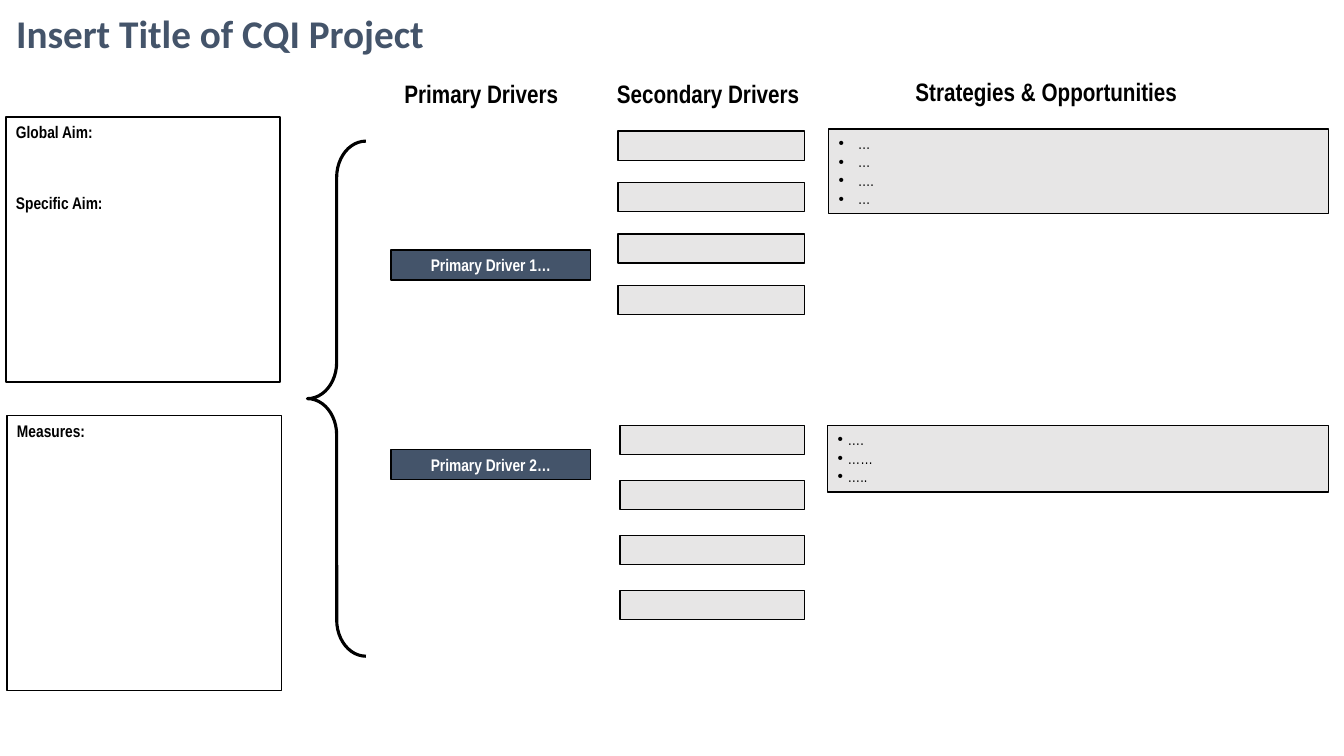
from dataclasses import dataclass

from pptx import Presentation
from pptx.dml.color import RGBColor
from pptx.enum.shapes import MSO_SHAPE as Preset
from pptx.enum.text import MSO_ANCHOR as Anchor, MSO_AUTO_SIZE as AutoSize, PP_ALIGN as Align
from pptx.oxml.xmlchemy import OxmlElement
from pptx.util import Inches, Pt

CELL = Inches(0.1)  # side of one square of the layout grid
COLUMNS, ROWS = 133.33, 75
INK, WHITE, NAVY, GREY = "000000", "FFFFFF", "44546A", "E7E6E6"
BODY_FONT, TITLE_FONT = "Arial Narrow", "Calibri"


@dataclass(frozen=True)
class Area:
    """A place on the grid, in columns and rows."""
    column: float
    row: float
    columns: float
    rows: float

    def emu(self) -> tuple[int, ...]:
        return tuple(round(n * CELL) for n in (self.column, self.row, self.columns, self.rows))


@dataclass(frozen=True)
class Panel:
    area: Area
    headings: list[str]


@dataclass(frozen=True)
class Driver:
    label: str
    row: float
    secondary: Area  # first of its secondary drivers
    secondary_step: float
    strategies: Area
    strategy_items: list[str]
    indent: float


TITLE_AREA = Area(0.6, 0.4, 89.1, 5.7)
BRACE_AREA = Area(30.5, 14, 5.8, 51.1)
SECONDARY_COUNT = 4
COLUMN_HEADINGS = {
    "Primary Drivers": Area(38.8, 7.3, 17.9, 4),
    "Secondary Drivers": Area(59.8, 7.3, 20.9, 4),
    "Strategies & Opportunities": Area(83.2, 7.1, 41.2, 4),
}
PANELS = [
    Panel(Area(0.6, 11.6, 27.2, 26.3), ["Global Aim:", "Specific Aim:"]),
    Panel(Area(0.7, 41.2, 27.2, 27.3), ["Measures:"]),
]
DRIVERS = [
    Driver("Primary Driver 1…", 24.8, Area(61.3, 13, 18.5, 2.9), 5.1,
           Area(82.2, 12.8, 49.6, 8.4), ["…", "…", "….", "…"], 0.19),
    Driver("Primary Driver 2…", 44.6, Area(61.5, 42.2, 18.3, 2.9), 5.45,
           Area(82.1, 42.2, 49.7, 6.6), ["….", "……", "….."], 0.1),
]


def rgb(hex_code: str) -> RGBColor:
    return RGBColor.from_string(hex_code)


def write(shape, lines: list[str], *, size: float, font: str = BODY_FONT, color: str = INK,
          bold: bool = True, align=Align.LEFT, anchor=Anchor.TOP, gap: float = 0,
          bullet_indent: float = 0) -> None:
    """Fill a shape with one paragraph per line; gap is the points between them."""
    frame = shape.text_frame
    frame.text = "\n".join(lines)
    frame.word_wrap = True
    frame.auto_size = AutoSize.NONE
    frame.vertical_anchor = anchor
    for number, paragraph in enumerate(frame.paragraphs):
        paragraph.alignment = align
        paragraph.space_before = Pt(gap if number else 0)
        style = paragraph.runs[0].font
        style.name, style.size, style.bold = font, Pt(size), bold
        style.color.rgb = rgb(color)
        if bullet_indent:
            add_bullet(paragraph, bullet_indent)


def add_bullet(paragraph, indent: float) -> None:
    properties = paragraph._p.get_or_add_pPr()
    properties.set("marL", str(Inches(indent)))
    properties.set("indent", str(-Inches(indent)))
    typeface = OxmlElement("a:buFont")
    typeface.set("typeface", "Arial")
    mark = OxmlElement("a:buChar")
    mark.set("char", "•")
    properties.extend([typeface, mark])


def place(shape, area: Area) -> None:
    shape.left, shape.top, shape.width, shape.height = area.emu()


def paint(shape, fill: str) -> None:
    shape.fill.solid()
    shape.fill.fore_color.rgb = rgb(fill)
    shape.line.color.rgb = rgb(INK)
    shape.line.width = Pt(1)


def add_box(slide, area: Area, fill: str):
    box = slide.shapes.add_shape(Preset.RECTANGLE, *area.emu())
    box.shadow.inherit = False
    paint(box, fill)
    return box


def add_brace(slide) -> None:
    brace = slide.shapes.add_shape(Preset.LEFT_BRACE, *BRACE_AREA.emu())
    brace.shadow.inherit = False
    brace.adjustments[0], brace.adjustments[1] = 0.62, 0.5
    brace.fill.background()
    brace.line.color.rgb = rgb(INK)
    brace.line.width = Pt(2.25)


def add_driver(slide, driver: Driver, strategies) -> None:
    primary = add_box(slide, Area(38.8, driver.row, 19.8, 3), NAVY)
    write(primary, [driver.label], size=12, color=WHITE, align=Align.CENTER, anchor=Anchor.MIDDLE)
    first = driver.secondary
    for number in range(SECONDARY_COUNT):
        row = first.row + number * driver.secondary_step
        add_box(slide, Area(first.column, row, first.columns, first.rows), GREY)
    place(strategies, driver.strategies)
    paint(strategies, GREY)
    write(strategies, driver.strategy_items, size=11, bold=False, bullet_indent=driver.indent)


def main() -> None:
    deck = Presentation()
    deck.slide_width, deck.slide_height = round(COLUMNS * CELL), ROWS * CELL
    two_content = deck.slide_layouts[3]
    slide = deck.slides.add_slide(two_content)

    title, *strategy_lists = slide.placeholders
    place(title, TITLE_AREA)
    write(title, ["Insert Title of CQI Project"], size=28, font=TITLE_FONT, color=NAVY)
    for heading, area in COLUMN_HEADINGS.items():
        write(slide.shapes.add_textbox(*area.emu()), [heading], size=18, align=Align.CENTER)
    for panel in PANELS:
        write(add_box(slide, panel.area, WHITE), panel.headings, size=12, gap=36)
    add_brace(slide)
    for driver, strategies in zip(DRIVERS, strategy_lists):
        add_driver(slide, driver, strategies)

    deck.save("out.pptx")


if __name__ == "__main__":
    main()
